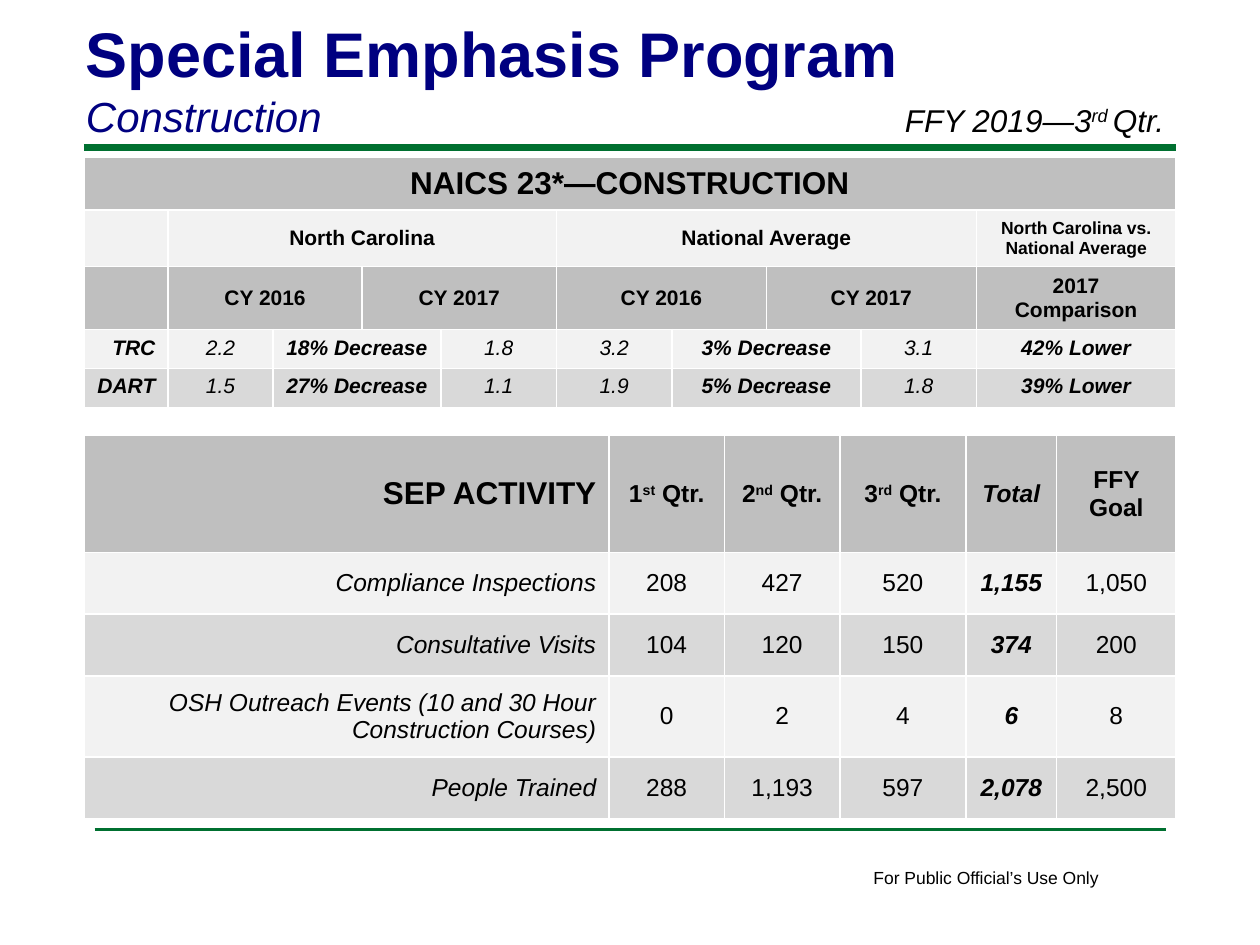
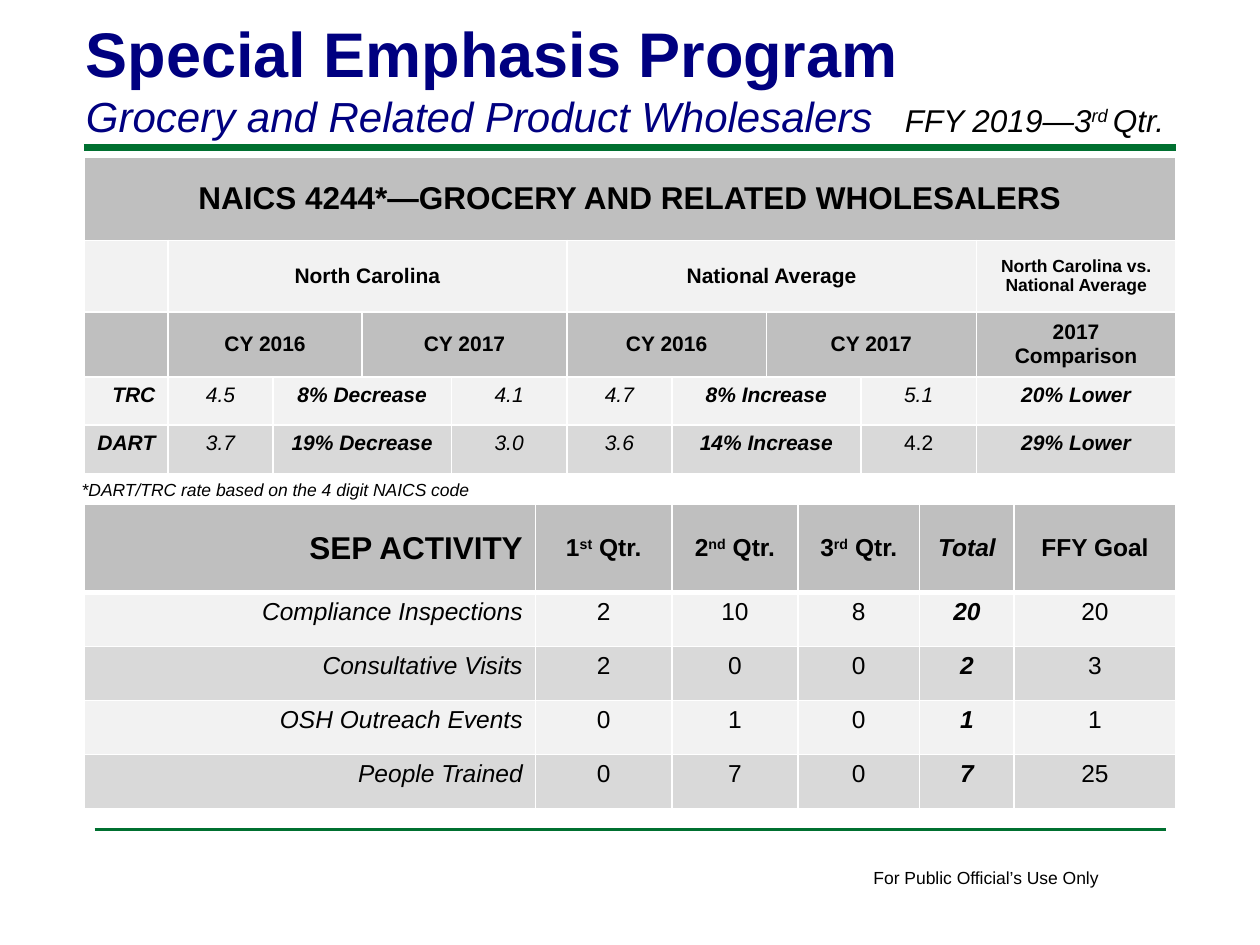
from dataclasses import dataclass

from lxml import etree
from pptx import Presentation
from pptx import util as u
from pptx.dml.color import RGBColor
from pptx.enum import shapes, text
from pptx.oxml import ns

NAVY = RGBColor(0x00, 0x00, 0x80)
GREEN = RGBColor(0x00, 0x70, 0x30)
BLACK = RGBColor(0x00, 0x00, 0x00)
WHITE = RGBColor(0xFF, 0xFF, 0xFF)
HEADER_GRAY = RGBColor(0xBF, 0xBF, 0xBF)
LIGHT_GRAY = RGBColor(0xF2, 0xF2, 0xF2)
MID_GRAY = RGBColor(0xD9, 0xD9, 0xD9)
RATE_FILLS = [HEADER_GRAY, LIGHT_GRAY, HEADER_GRAY, LIGHT_GRAY, MID_GRAY]
ACTIVITY_FILLS = [HEADER_GRAY] + [LIGHT_GRAY, MID_GRAY] * 2

LEFT, RIGHT, CENTER = text.PP_ALIGN.LEFT, text.PP_ALIGN.RIGHT, text.PP_ALIGN.CENTER
TOP, MIDDLE, BOTTOM = text.MSO_ANCHOR.TOP, text.MSO_ANCHOR.MIDDLE, text.MSO_ANCHOR.BOTTOM
TABLE_LEFT, TABLE_WIDTH = 8, 104


@dataclass
class Entry:
    """One table cell's wording and look; ^marks^ enclose superscript."""
    words: str
    span: int = 1
    size: float = 14
    bold: bool = False
    italic: bool = False
    align: text.PP_ALIGN = CENTER
    anchor: text.MSO_ANCHOR = MIDDLE


class ReportDeck:
    """Hold the report style and current page on a grid of 120 by 90 units."""
    font = "Arial"

    def __init__(self):
        self.deck = Presentation()
        self.deck.slide_width, self.deck.slide_height = u.Inches(10), u.Inches(7.5)
        self.page = None

    def column(self, count):
        return round(self.deck.slide_width * count / 120)

    def row(self, count):
        return round(self.deck.slide_height * count / 90)

    def add_page(self, subject):
        self.page = self.deck.slides.add_slide(self.deck.slide_layouts[6])
        self.add_rule(8, 112, 14.04, 4)
        self.add_rule(9, 111, 79, 2)
        self.add_text(82, 82, 24.1, 3.2, [("For Public Official’s Use Only", 10, False, False)],
                      wrap=False)
        self.add_text(7, 0.7, 99, 13.3, [("Special Emphasis Program", 36, True, False),
                                         (subject, 24, False, True)], NAVY, BOTTOM)
        self.add_text(85, 9, 30, 4.8, [("FFY 2019—3^rd ^Qtr.", 18, False, True)])

    def add_rule(self, start, end, level, weight):
        rule = self.page.shapes.add_connector(
            shapes.MSO_CONNECTOR.STRAIGHT, self.column(start), self.row(level),
            self.column(end), self.row(level))
        rule.line.color.rgb = GREEN
        rule.line.width = u.Pt(weight)
        etree.SubElement(rule._element.spPr, ns.qn("a:effectLst"))

    def add_text(self, left, top, width, height, lines, color=BLACK, anchor=TOP, wrap=True):
        box = self.page.shapes.add_textbox(self.column(left), self.row(top),
                                           self.column(width), self.row(height))
        frame = box.text_frame
        frame.word_wrap = wrap
        frame.vertical_anchor = anchor
        for index, (words, size, bold, italic) in enumerate(lines):
            para = frame.add_paragraph() if index else frame.paragraphs[0]
            self.add_spans(para, words, size, bold, italic, color)

    def add_spans(self, para, words, size, bold, italic, color=BLACK):
        for index, part in enumerate(words.split("^")):
            span = para.add_run()
            span.text = part
            span.font.name, span.font.size = self.font, u.Pt(size)
            span.font.bold, span.font.italic = bold, italic
            span.font.color.rgb = color
            if index % 2:
                span.font._element.set("baseline", "30000")

    def add_border(self, cell, top, bottom):
        properties = cell._tc.get_or_add_tcPr()
        for side, weight in zip("LRTB", (1, 1, top, bottom)):
            line = etree.SubElement(properties, ns.qn(f"a:ln{side}"), w=str(u.Pt(weight)))
            fill = etree.SubElement(line, ns.qn("a:solidFill"))
            etree.SubElement(fill, ns.qn("a:srgbClr"), val=str(WHITE))

    def add_table(self, top, widths, heights, entries, fills, header_rule=1):
        table = self.page.shapes.add_table(
            len(heights), len(widths), self.column(TABLE_LEFT), self.row(top),
            self.column(TABLE_WIDTH), self.row(sum(heights))).table
        table.first_row = table.horz_banding = False
        for column, width in zip(table.columns, widths):
            column.width = self.column(width)
        for index, (row, height, fill) in enumerate(zip(table.rows, heights, fills)):
            row.height = self.row(height)
            for cell in row.cells:
                self.add_border(cell, header_rule if index == 1 else 1,
                                header_rule if index == 0 else 1)
                cell.fill.solid()
                cell.fill.fore_color.rgb = fill
            position = 0
            for entry in entries[index]:
                self.add_entry(table, index, position, entry)
                position += entry.span

    def add_entry(self, table, row, column, entry):
        cell = table.cell(row, column)
        if entry.span > 1:
            cell.merge(table.cell(row, column + entry.span - 1))
        cell.vertical_anchor = entry.anchor
        if entry.words:
            para = cell.text_frame.paragraphs[0]
            para.alignment = entry.align
            self.add_spans(para, entry.words, entry.size, entry.bold, entry.italic)


def rate_entries(heading, rates, upright=()):
    """Lay out the injury rate table; upright lists (row, column) values not in italics."""
    years = [Entry(f"CY {year}", 2, 12, True) for year in (2016, 2017)]
    entries = [
        [Entry(heading, 10, 18, True)],
        [Entry(""), Entry("North Carolina", 4, 12, True),
         Entry("National Average", 4, 12, True),
         Entry("North Carolina vs. National Average", 1, 10, True)],
        [Entry(""), *years, *years, Entry("2017 Comparison", 1, 12, True)],
    ]
    for row, values in enumerate(rates):
        entries.append([
            Entry(value, 2 if column in (2, 5) else 1, 12, column in (0, 2, 5, 7),
                  (row, column) not in upright, CENTER if column else RIGHT, TOP)
            for column, value in enumerate(values)])
    return entries


def activity_entries(activities, anchor):
    """Lay out the quarterly activity table."""
    titles = ["1^st^ Qtr.", "2^nd^ Qtr.", "3^rd^ Qtr.", "Total", "FFY Goal"]
    header = [Entry("SEP ACTIVITY", size=18, bold=True, align=RIGHT)]
    header += [Entry(title, bold=True, italic=title == "Total") for title in titles]
    return [header] + [
        [Entry(value, bold=column == 4, italic=column in (0, 4),
               align=CENTER if column else RIGHT, anchor=anchor)
         for column, value in enumerate(values)]
        for values in activities]


def main():
    """Build the two program pages."""
    report = ReportDeck()

    report.add_page("Construction")
    rates = [
        ["TRC", "2.2", "18% Decrease", "1.8", "3.2", "3% Decrease", "3.1", "42% Lower"],
        ["DART", "1.5", "27% Decrease", "1.1", "1.9", "5% Decrease", "1.8", "39% Lower"],
    ]
    report.add_table(15, [8, 10, 8.5, 7.5, 11, 11, 9, 9, 11, 19], [5, 5.4, 6, 3.7, 3.7],
                     rate_entries("NAICS 23*—CONSTRUCTION", rates), RATE_FILLS)
    activities = [
        ["Compliance Inspections", "208", "427", "520", "1,155", "1,050"],
        ["Consultative Visits", "104", "120", "150", "374", "200"],
        ["OSH Outreach Events (10 and 30 Hour Construction Courses)",
         "0", "2", "4", "6", "8"],
        ["People Trained", "288", "1,193", "597", "2,078", "2,500"],
    ]
    report.add_table(41.5, [50, 11, 11, 12, 8.65, 11.35], [11.1, 5.9, 5.9, 7.7, 5.9],
                     activity_entries(activities, MIDDLE), ACTIVITY_FILLS)

    report.add_page("Grocery and Related Product Wholesalers")
    rates = [
        ["TRC", "4.5", "8% Decrease", "4.1", "4.7", "8% Increase", "5.1", "20% Lower"],
        ["DART", "3.7", "19% Decrease", "3.0", "3.6", "14% Increase", "4.2", "29% Lower"],
    ]
    report.add_table(15, [8, 10, 8.5, 8.5, 11, 10, 9, 9, 11, 19], [7.9, 6.8, 6.2, 4.6, 4.6],
                     rate_entries("NAICS 4244*—GROCERY AND RELATED WHOLESALERS", rates,
                                  upright=[(1, 6)]), RATE_FILLS)
    report.add_text(6.6, 45, 40.4, 3.2,
                    [("*DART/TRC rate based on the 4 digit NAICS code", 10, False, True)])
    activities = [
        ["Compliance Inspections", "2", "10", "8", "20", "20"],
        ["Consultative Visits", "2", "0", "0", "2", "3"],
        ["OSH Outreach Events", "0", "1", "0", "1", "1"],
        ["People Trained", "0", "7", "0", "7", "25"],
    ]
    report.add_table(48, [43, 13, 12, 11.6, 9, 15.4], [8.4] + [5.15] * 4,
                     activity_entries(activities, TOP), ACTIVITY_FILLS, header_rule=3)

    report.deck.save("out.pptx")


if __name__ == "__main__":
    main()
